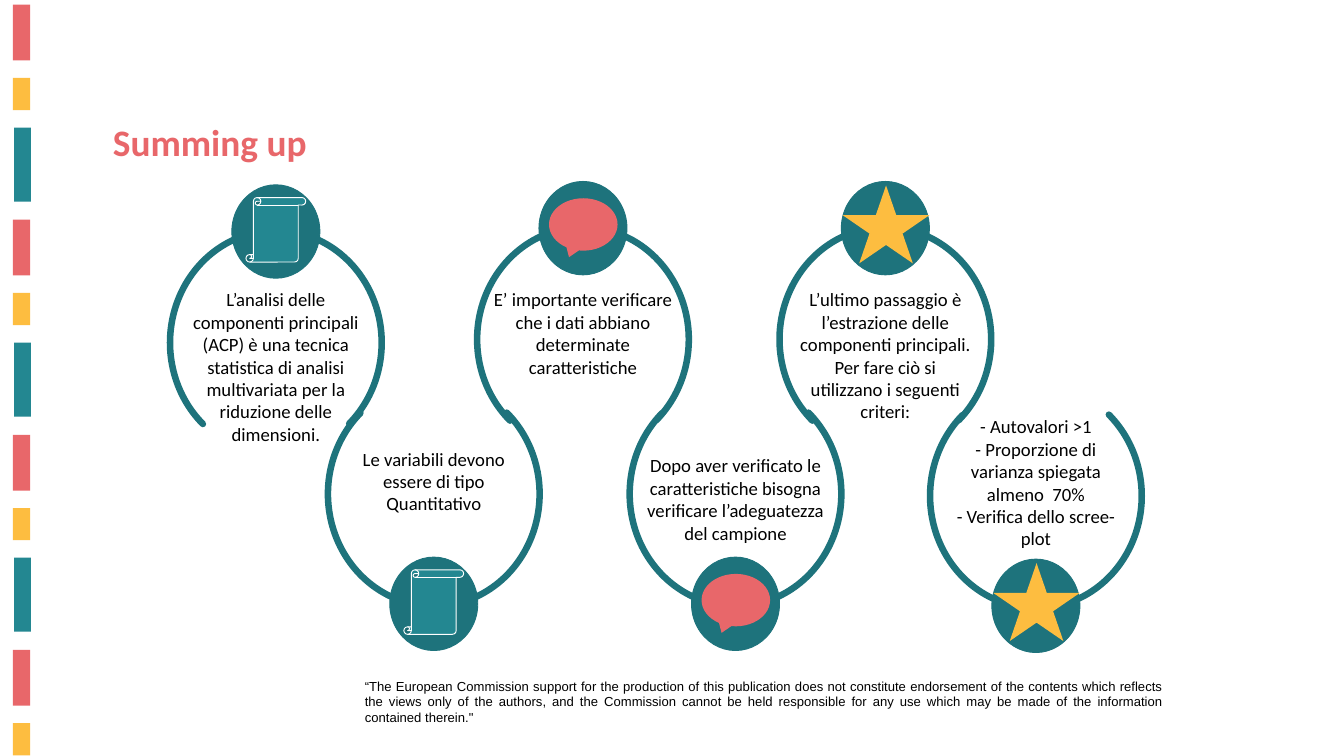
from pptx import Presentation
from pptx import util as u
from pptx.dml.color import RGBColor
from pptx.enum import shapes, text

WIDE, HIGH = 20, 11.25
TEAL = RGBColor(0x23, 0x87, 0x91)
DEEP = RGBColor(0x1E, 0x73, 0x7C)
RED = RGBColor(0xE8, 0x67, 0x6A)
GOLD = RGBColor(0xFD, 0xBD, 0x40)
WHITE = RGBColor(0xFF, 0xFF, 0xFF)
BLACK = RGBColor(0, 0, 0)

KIND = shapes.MSO_SHAPE
ALIGN = text.PP_ALIGN

# Side stripes: left, first top, width, height, colour
STRIPES = [
    (0.19, 0.07, 0.26, 0.83, RED),
    (0.19, 1.16, 0.26, 0.48, GOLD),
    (0.21, 1.9, 0.25, 1.1, TEAL),
]
PERIOD = 3.2

RING_W, RING_H = 3.15, 3.34
DISC_W, DISC_H = 1.31, 1.39

# Icons: shape, offset in the disc, size, fill, outline
SCROLL = (KIND.VERTICAL_SCROLL, 0.21, 0.19, 0.89, 0.96, TEAL, WHITE)
SPEECH = (KIND.OVAL_CALLOUT, 0.15, 0.25, 1.02, 0.78, RED, None)
STAR = (KIND.STAR_5_POINT, 0.02, 0.06, 1.29, 1.16, GOLD, None)

# Steps: ring left, ring top, icon, text top, text width, text
STEPS = [
    (2.53, 3.43, SCROLL, 4.24, 2.9,
     "L’analisi delle componenti principali (ACP) è una tecnica statistica "
     "di analisi multivariata per la riduzione delle dimensioni."),
    (4.88, 5.68, SCROLL, 6.61, 3.08,
     "Le variabili devono essere di tipo Quantitativo"),
    (7.1, 3.38, SPEECH, 4.24, 3.08,
     "E’ importante verificare che i dati abbiano determinate caratteristiche"),
    (9.37, 5.68, SPEECH, 6.71, 2.9,
     "Dopo aver verificato le caratteristiche bisogna verificare "
     "l’adeguatezza del campione"),
    (11.6, 3.38, STAR, 4.24, 2.75,
     "L’ultimo passaggio è l’estrazione delle componenti principali. "
     "Per fare ciò si utilizzano i seguenti criteri:"),
    (13.84, 5.71, STAR, 6.13, 2.75,
     "- Autovalori >1\n- Proporzione di varianza spiegata almeno  70%\n"
     "- Verifica dello scree-plot"),
]

NOTE = ("“The European Commission support for the production of this "
        "publication does not constitute endorsement of the contents which "
        "reflects the views only of the authors, and the Commission cannot be "
        "held responsible for any use which may be made of the information "
        "contained therein.\"")


def box(*sides):
    return [u.Inches(side) for side in sides]


def draw(slide, kind, place, fill=None, line=None, weight=1):
    shape = slide.shapes.add_shape(kind, *box(*place))
    shape.shadow.inherit = False
    if fill is None:
        shape.fill.background()
    else:
        shape.fill.solid()
        shape.fill.fore_color.rgb = fill
    if line is None:
        shape.line.fill.background()
    else:
        shape.line.color.rgb = line
        shape.line.width = u.Pt(weight)
    return shape


def style(frame, size, face, color, align, bold=False):
    frame.word_wrap = True
    for para in frame.paragraphs:
        para.alignment = align
        for run in para.runs:
            run.font.size = u.Pt(size)
            run.font.name = face
            run.font.bold = bold
            run.font.color.rgb = color


def write(slide, place, words, size, face, align):
    frame = slide.shapes.add_textbox(*box(*place)).text_frame
    frame.text = words
    style(frame, size, face, BLACK, align)


def stripe(slide):
    """Repeat the three stripes down the left edge."""
    for turn in range(4):
        for left, top, wide, high, color in STRIPES:
            start = top + turn * PERIOD
            if start < HIGH:
                draw(slide, KIND.RECTANGLE, (left, start, wide, high), color)


def head(slide, words):
    title = slide.shapes.title
    title.left, title.top, title.width, title.height = box(1.58, 1.72, 6.58, 0.77)
    frame = title.text_frame
    frame.text = words
    frame.auto_size = text.MSO_AUTO_SIZE.NONE
    frame.vertical_anchor = text.MSO_ANCHOR.TOP
    style(frame, 40, "Calibri", RED, ALIGN.LEFT, True)


def ring(slide, left, top, icon, low):
    """Draw an open ring with its disc and icon; a low ring hangs upside down."""
    arc = draw(slide, KIND.ARC, (left, top, RING_W, RING_H), line=DEEP, weight=7)
    arc.adjustments[0], arc.adjustments[1] = 79.14, 28.68
    arc.line._get_or_add_ln().set("cap", "rnd")
    arc.rotation = 180 if low else 0

    disc_x = left + (RING_W - DISC_W) / 2
    disc_y = top + (2.61 if low else -0.68)
    draw(slide, KIND.OVAL, (disc_x, disc_y, DISC_W, DISC_H), DEEP, DEEP)
    kind, right, down, wide, high, fill, line = icon
    draw(slide, kind, (disc_x + right, disc_y + down, wide, high), fill, line)


def main():
    deck = Presentation()
    deck.slide_width, deck.slide_height = box(WIDE, HIGH)
    slide = deck.slides.add_slide(deck.slide_layouts[5])

    stripe(slide)
    head(slide, "Summing up")
    for index, (left, top, icon, *_) in enumerate(STEPS):
        ring(slide, left, top, icon, index % 2 == 1)
    for left, _, _, top, wide, words in STEPS:
        inset = (RING_W - wide) / 2
        write(slide, (left + inset, top, wide, 2.12), words,
              20, "Calibri", ALIGN.CENTER)
    write(slide, (5.33, 10.04, 12.08, 0.81), NOTE, 14, "Arial", ALIGN.JUSTIFY)
    deck.save("out.pptx")


if __name__ == "__main__":
    main()
